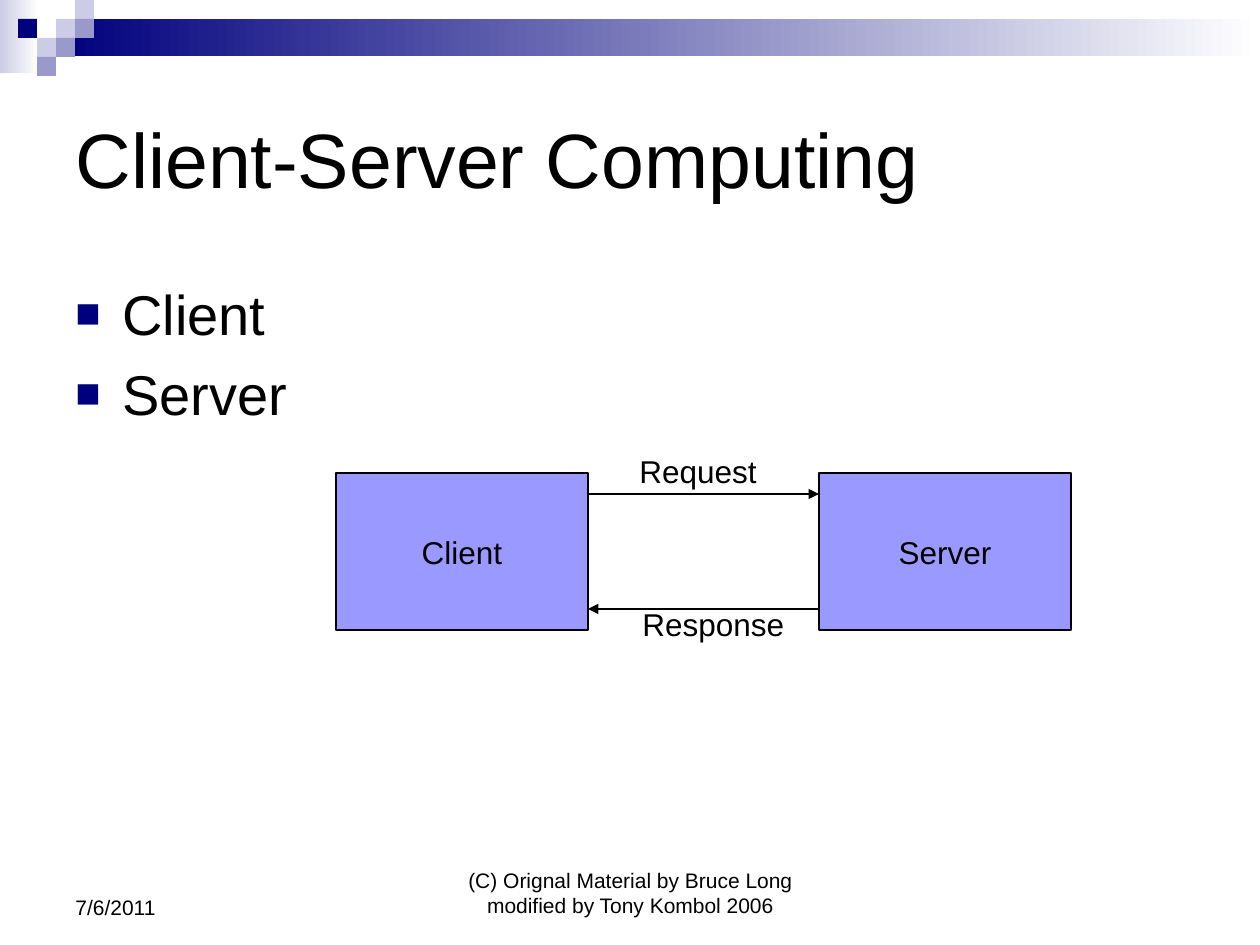
import lxml.etree
import pptx
import pptx.util
import pptx.dml.color
import pptx.enum.shapes
import pptx.enum.text
import pptx.oxml.ns

RGBColor = pptx.dml.color.RGBColor
Align = pptx.enum.text.PP_ALIGN
Anchor = pptx.enum.text.MSO_ANCHOR
qn = pptx.oxml.ns.qn

BLACK = RGBColor(0, 0, 0)
WHITE = RGBColor(255, 255, 255)
NAVY = RGBColor(0x00, 0x00, 0x7D)
PALE = RGBColor(0xCC, 0xCC, 0xE6)
LILAC = RGBColor(0x99, 0x99, 0xCC)
PERIWINKLE = RGBColor(0x99, 0x99, 0xFF)
SCALE = 914400 // 126


def px(*lengths):
    return [length * SCALE for length in lengths]


def add_part(parent, tag, **settings):
    return lxml.etree.SubElement(parent, qn(tag), settings)


def add_bullet(para, color, indent=47):
    properties = para._p.get_or_add_pPr()
    properties.set("marL", str(indent * SCALE))
    properties.set("indent", str(-indent * SCALE))
    add_part(add_part(properties, "a:buClr"), "a:srgbClr", val=str(color))
    add_part(properties, "a:buSzPct", val="75000")
    add_part(properties, "a:buFont", typeface="Arial")
    add_part(properties, "a:buChar", char="■")


def write(frame, *lines, size=18, align=Align.LEFT, anchor=Anchor.TOP, wrap=True,
          space=0, bullet=None):
    frame.auto_size = pptx.enum.text.MSO_AUTO_SIZE.NONE
    frame.word_wrap = wrap
    frame.vertical_anchor = anchor
    for index, line in enumerate(lines):
        para = frame.add_paragraph() if index else frame.paragraphs[0]
        para.alignment = align
        para.space_before = pptx.util.Pt(space)
        span = para.add_run()
        span.text = line
        span.font.size = pptx.util.Pt(size)
        span.font.name = "Arial"
        span.font.color.rgb = BLACK
        if bullet:
            add_bullet(para, bullet)


class Page:
    def __init__(self, deck):
        self.slide = deck.slides.add_slide(deck.slide_layouts[5])
        self.shapes = self.slide.shapes
        self.line_width = pptx.util.Pt(0.75)

    def title(self, text, left, top, width, height):
        holder = self.shapes.title
        holder.left, holder.top, holder.width, holder.height = px(left, top, width, height)
        write(holder.text_frame, text, size=44, anchor=Anchor.MIDDLE)

    def text(self, lines, left, top, width, height, **style):
        box = self.shapes.add_textbox(*px(left, top, width, height))
        write(box.text_frame, *lines, **style)

    def block(self, left, top, width, height, fill, fade=None, label=None):
        box = self.shapes.add_shape(pptx.enum.shapes.MSO_SHAPE.RECTANGLE,
                                    *px(left, top, width, height))
        box.shadow.inherit = False
        if fade is None:
            box.fill.solid()
            box.fill.fore_color.rgb = fill
        else:
            box.fill.gradient()
            box.fill.gradient_angle = 0
            for stop, color in zip(box.fill.gradient_stops, (fill, fade)):
                stop.color.rgb = color
        if label is None:
            box.line.fill.background()
        else:
            box.line.color.rgb = BLACK
            box.line.width = self.line_width
            write(box.text_frame, label, align=Align.CENTER, anchor=Anchor.MIDDLE, wrap=False)

    def arrow(self, start, end, y):
        arrow = self.shapes.add_connector(pptx.enum.shapes.MSO_CONNECTOR.STRAIGHT,
                                          *px(start, y, end, y))
        arrow.line.color.rgb = BLACK
        arrow.line.width = self.line_width
        properties = arrow._element.spPr
        add_part(properties.find(qn("a:ln")), "a:tailEnd", type="triangle")
        add_part(properties, "a:effectLst")


deck = pptx.Presentation()
deck.slide_width, deck.slide_height = pptx.util.Inches(10), pptx.util.Inches(7.5)
page = Page(deck)

page.block(0, 0, 39, 73, PALE, fade=WHITE)
page.block(57, 19, 1203, 37, NAVY, fade=WHITE)
CELL = 19
for column, row, color in ((3, 1, PALE), (4, 0, PALE), (4, 1, LILAC), (2, 2, PALE),
                           (1, 1, NAVY), (3, 2, LILAC), (2, 3, LILAC)):
    page.block(column * CELL - 1, row * CELL, CELL, CELL, color)

page.title("Client-Server Computing", 63, 63, 1134, 189)
page.text(["Client", "Server"], 63, 273, 1134, 536, size=32, space=7.4, bullet=NAVY)

BOX_WIDTH, CLIENT_LEFT, SERVER_LEFT = 252, 336, 819
for label, left in (("Client", CLIENT_LEFT), ("Server", SERVER_LEFT)):
    page.block(left, 473, BOX_WIDTH, 157, PERIWINKLE, label=label)
client_right = CLIENT_LEFT + BOX_WIDTH
page.arrow(client_right, SERVER_LEFT, 494)
page.arrow(SERVER_LEFT, client_right, 609)
page.text(["Request"], 627, 446, 142, 50, wrap=False)
page.text(["Response"], 630, 599, 168, 50, wrap=False)

page.text(["(C) Orignal Material by Bruce Long modified by Tony Kombol 2006"],
          431, 861, 399, 63, size=12, align=Align.CENTER, anchor=Anchor.BOTTOM)
page.text(["7/6/2011"], 63, 861, 294, 65, size=12, anchor=Anchor.BOTTOM)

deck.save("out.pptx")
